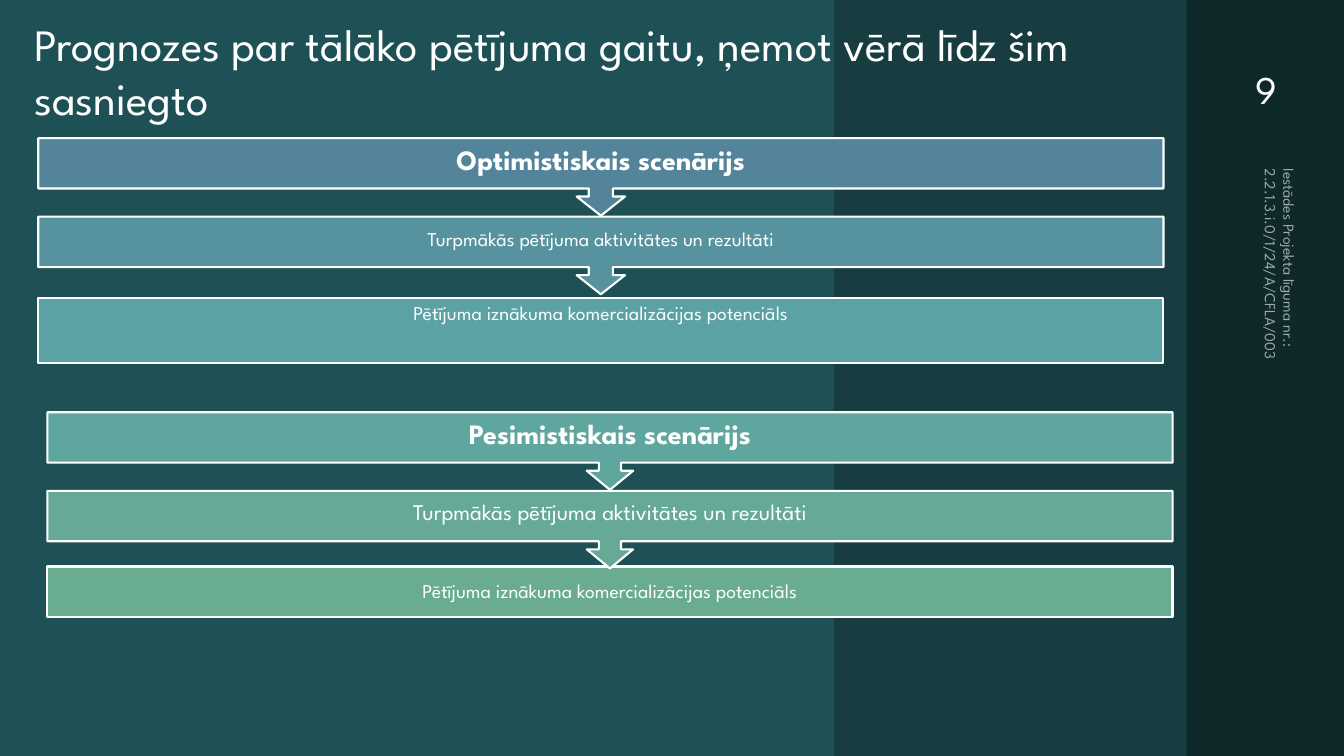
from dataclasses import dataclass
from typing import Any

from lxml import etree
from pptx import Presentation
from pptx import util as u
from pptx.dml import color
from pptx.enum import shapes, text
from pptx.oxml import ns

PX = 9144
FONT = "League Spartan"
WHITE = "FFFFFF"
WIDE = 1116
TALL = 50
NECK, HEAD, NOTCH, TIP = 23, 47, 8, 77


@dataclass
class Band:
    left: int
    width: int
    tint: str


@dataclass
class Step:
    left: int
    top: int
    tall: int
    tint: str
    words: str
    size: int
    pad: int
    foot: int
    arrow: bool = False
    bold: bool = False


BANDS = [
    Band(0, 1333, "1E5155"),
    Band(827, 352, "173D40"),
    Band(1177, 156, "0F282A"),
]

WORK = "Turpmākās pētījuma aktivitātes un rezultāti"
SALE = "Pētījuma iznākuma komercializācijas potenciāls"
STEPS = [
    Step(47, 562, TALL, "6AAC90", SALE, 14, 11, 11),
    Step(47, 487, TALL, "65A996", WORK, 16, 12, 44, arrow=True),
    Step(47, 409, TALL, "5FA79E", "Pesimistiskais scenārijs", 20, 16, 47, arrow=True, bold=True),
    Step(38, 296, 64, "5AA2A4", SALE, 14, 12, 44),
    Step(38, 215, TALL, "57939F", WORK, 14, 11, 42, arrow=True),
    Step(38, 137, TALL, "54849A", "Optimistiskais scenārijs", 20, 16, 47, arrow=True, bold=True),
]


def px(num: int) -> u.Emu:
    return u.Emu(num * PX)


def paint(fill: Any, tint: str, alpha: int = 100) -> None:
    fill.solid()
    fill.fore_color.rgb = color.RGBColor.from_string(tint)
    if alpha < 100:
        node = fill._xPr.find(".//" + ns.qn("a:srgbClr"))
        etree.SubElement(node, ns.qn("a:alpha"), val=str(alpha * 1000))


def place(shape: Any, left: int, top: int, width: int, height: int) -> None:
    shape.left, shape.top = px(left), px(top)
    shape.width, shape.height = px(width), px(height)


def write(shape: Any, words: str, *, size: int, bold: bool = False, alpha: int = 100,
          align: Any = text.PP_ALIGN.LEFT, anchor: Any = text.MSO_ANCHOR.TOP,
          pads: tuple[int, int, int, int] = (10, 5, 10, 5),
          pitch: float = 1.0, after: int = 0) -> None:
    frame = shape.text_frame
    frame.word_wrap = True
    frame.auto_size = text.MSO_AUTO_SIZE.NONE
    frame.vertical_anchor = anchor
    frame.margin_left, frame.margin_top, frame.margin_right, frame.margin_bottom = map(px, pads)
    para = frame.paragraphs[0]
    para.alignment = align
    para.line_spacing = pitch
    para.space_after = u.Pt(after)
    run = para.add_run()
    run.text = words
    run.font.name = FONT
    run.font.size = u.Pt(size)
    run.font.bold = bold
    paint(run.font.fill, WHITE, alpha)


def block(slide: Any, left: int, top: int, width: int, height: int, tint: str) -> Any:
    kind = shapes.MSO_SHAPE.RECTANGLE
    shape = slide.shapes.add_shape(kind, px(left), px(top), px(width), px(height))
    shape.shadow.inherit = False
    paint(shape.fill, tint)
    shape.line.fill.background()
    return shape


def flow(slide: Any, step: Step) -> Any:
    right, base, mid = step.left + WIDE, step.top + step.tall, step.left + WIDE / 2
    neck, head, notch = NECK / 2, HEAD / 2, base + NOTCH
    pen = slide.shapes.build_freeform(right, base, scale=PX)
    pen.add_line_segments([
        (mid + neck, base), (mid + neck, notch), (mid + head, notch),
        (mid, step.top + TIP),
        (mid - head, notch), (mid - neck, notch), (mid - neck, base),
        (step.left, base), (step.left, step.top), (right, step.top),
    ], close=True)
    shape = pen.convert_to_shape()
    shape.shadow.inherit = False
    paint(shape.fill, step.tint)
    return shape


def draw(slide: Any, step: Step) -> None:
    if step.arrow:
        shape = flow(slide, step)
    else:
        shape = block(slide, step.left, step.top, WIDE, step.tall, step.tint)
    paint(shape.line.fill, WHITE)
    shape.line.width = u.Pt(1.5)
    write(shape, step.words, size=step.size, bold=step.bold, align=text.PP_ALIGN.CENTER,
          anchor=text.MSO_ANCHOR.MIDDLE, pads=(step.pad, step.pad, step.pad, step.foot), pitch=0.9)


def label(slide: Any, left: int, top: int, width: int, height: int) -> Any:
    return slide.shapes.add_textbox(px(left), px(top), px(width), px(height))


def main() -> None:
    deck = Presentation()
    deck.slide_width, deck.slide_height = px(1333), px(750)
    slide = deck.slides.add_slide(deck.slide_layouts[5])
    paint(slide.background.fill, "000000")
    for band in BANDS:
        block(slide, band.left, 0, band.width, 750, band.tint)

    page = label(slide, 1210, 32, 92, 84)
    write(page, "9", size=28, align=text.PP_ALIGN.CENTER, anchor=text.MSO_ANCHOR.BOTTOM, after=6)
    note = label(slide, 1134, 270, 286, 61)
    note.rotation = 90
    write(note, "Iestādes Projekta līguma nr.: 2.2.1.3.i.0/1/24/A/CFLA/003", size=11,
          alpha=60, anchor=text.MSO_ANCHOR.BOTTOM, after=6)

    title = slide.shapes.title
    title._element.getparent().append(title._element)
    place(title, 24, 12, 1055, 165)
    write(title, "Prognozes par tālāko pētījuma gaitu, ņemot vērā līdz šim sasniegto", size=32)
    for step in STEPS:
        draw(slide, step)
    deck.save("out.pptx")


if __name__ == "__main__":
    main()
